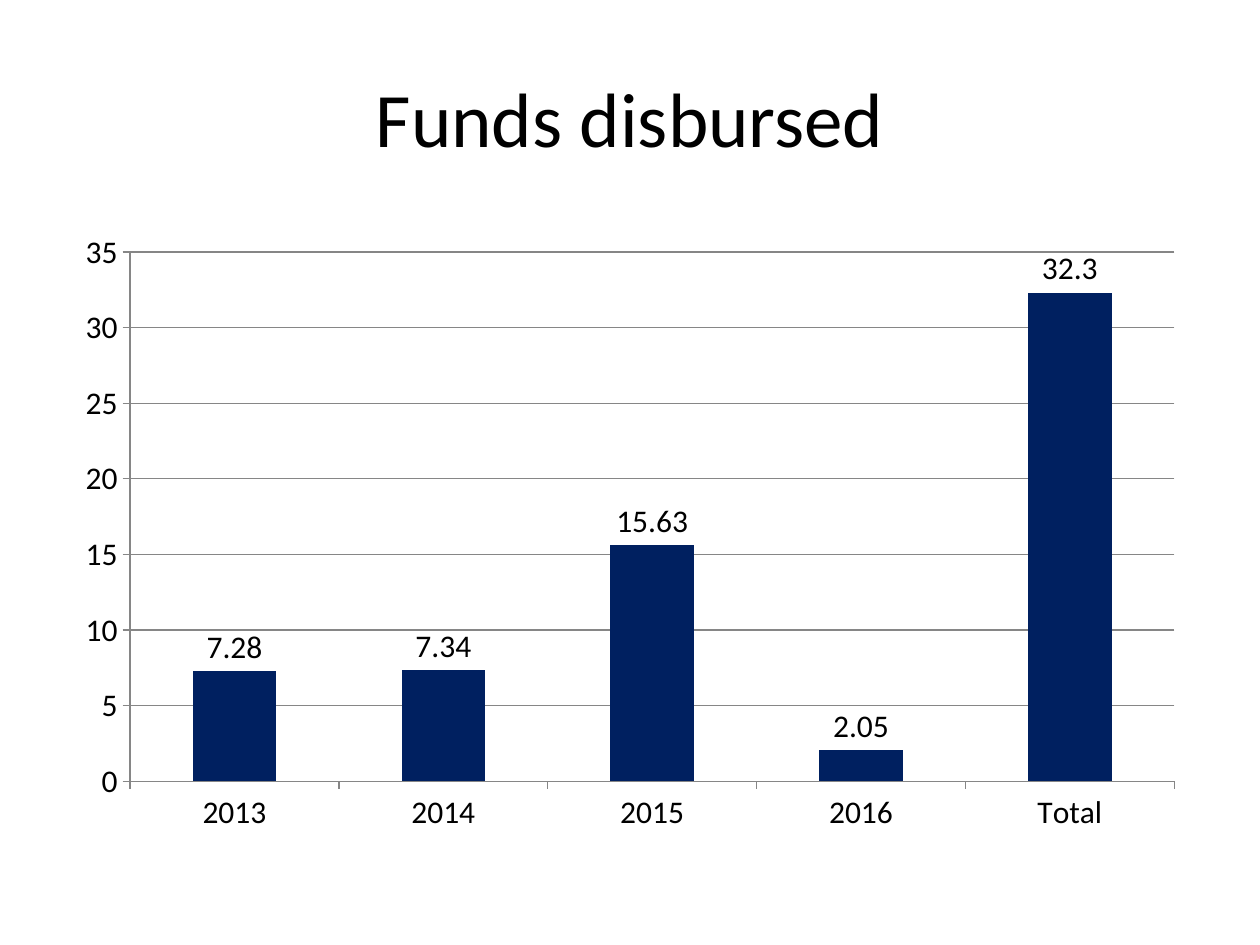
from dataclasses import dataclass

from pptx import Presentation
from pptx.chart.data import CategoryChartData
from pptx.dml.color import RGBColor
from pptx.enum.chart import XL_CHART_TYPE, XL_LABEL_POSITION, XL_TICK_MARK
from pptx.enum.text import MSO_ANCHOR, PP_ALIGN
from pptx.util import Inches, Pt


@dataclass(frozen=True)
class Theme:
    font: str = "Calibri"
    text: RGBColor = RGBColor(0, 0, 0)
    bar: RGBColor = RGBColor(0, 0x20, 0x60)
    line: RGBColor = RGBColor(0x86, 0x86, 0x86)
    title_size: int = 44
    chart_size: int = 18


THEME = Theme()
WIDTH, HEIGHT = Inches(10), Inches(7.5)
MARGIN = int(WIDTH * 0.05)
CONTENT_WIDTH = WIDTH - 2 * MARGIN
FUNDS = {"2013": 7.28, "2014": 7.34, "2015": 15.63, "2016": 2.05, "Total": 32.3}


def style_font(font, size):
    font.name = THEME.font
    font.size = Pt(size)
    font.color.rgb = THEME.text


def style_line(line):
    line.color.rgb = THEME.line
    line.width = Pt(0.75)


def add_title(slide, text):
    title = slide.shapes.title
    title.left, title.top = MARGIN, int(HEIGHT * 0.04)
    title.width, title.height = CONTENT_WIDTH, Inches(1.25)
    frame = title.text_frame
    frame.text = text
    frame.vertical_anchor = MSO_ANCHOR.MIDDLE
    paragraph = frame.paragraphs[0]
    paragraph.alignment = PP_ALIGN.CENTER
    style_font(paragraph.font, THEME.title_size)


def style_axes(chart):
    for axis in (chart.category_axis, chart.value_axis):
        axis.major_tick_mark = XL_TICK_MARK.OUTSIDE
        axis.minor_tick_mark = XL_TICK_MARK.NONE
        style_line(axis.format.line)
    chart.category_axis.has_major_gridlines = False
    values = chart.value_axis
    values.minimum_scale, values.maximum_scale, values.major_unit = 0, 35, 5
    values.has_major_gridlines = True
    style_line(values.major_gridlines.format.line)


def style_bars(plot):
    plot.gap_width = 150
    plot.vary_by_categories = False
    fill = plot.series[0].format.fill
    fill.solid()
    fill.fore_color.rgb = THEME.bar
    plot.has_data_labels = True
    labels = plot.data_labels
    labels.show_value = True
    labels.position = XL_LABEL_POSITION.OUTSIDE_END
    style_font(labels.font, THEME.chart_size)


def add_column_chart(slide, values):
    data = CategoryChartData()
    data.categories = list(values)
    data.add_series("Series 1", list(values.values()))
    chart = slide.shapes.add_chart(
        XL_CHART_TYPE.COLUMN_CLUSTERED,
        MARGIN, Inches(1.75), CONTENT_WIDTH, int(HEIGHT * 0.66), data,
    ).chart
    chart.has_title = False
    chart.has_legend = False
    style_font(chart.font, THEME.chart_size)
    style_axes(chart)
    style_bars(chart.plots[0])


def main():
    presentation = Presentation()
    presentation.slide_width, presentation.slide_height = WIDTH, HEIGHT
    slide = presentation.slides.add_slide(presentation.slide_layouts[5])
    add_title(slide, "Funds disbursed")
    add_column_chart(slide, FUNDS)
    presentation.save("out.pptx")


if __name__ == "__main__":
    main()
